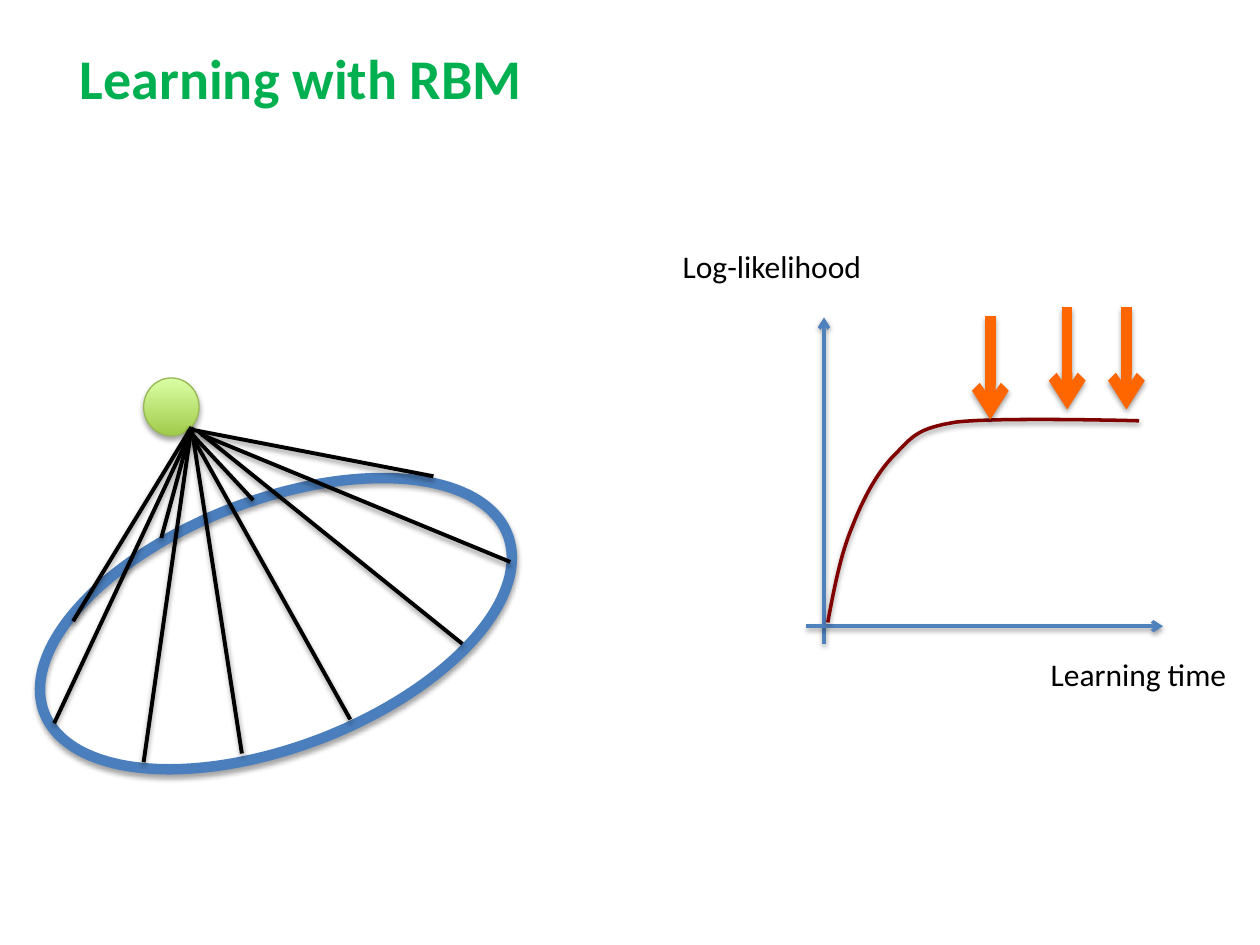
from lxml import etree
from pptx import Presentation, util as u
from pptx.dml.color import RGBColor
from pptx.enum import shapes, text
from pptx.oxml import ns

LABELS = [
    ("Learning with RBM ", (0, 0.3, 4.88, 0.64), 32, "00B050", True),
    ("Learning time", (8.24, 5.15, 1.61, 0.4), 18, "000000", False),
    ("Log-likelihood", (5.32, 1.91, 1.64, 0.4), 18, "000000", False),
]
NODE = (1.14, 3, 0.44, 0.46)
RING = (0.22, 3.97, 3.94, 1.96)
RING_ROTATION = -21
SPOKES = [
    ((1.52, 3.41), (3.44, 3.78)),
    ((1.6, 3.45), (4.05, 4.46)),
    ((1.57, 3.42), (3.67, 5.11)),
    ((1.54, 3.49), (2.78, 5.71)),
    ((1.52, 3.39), (1.92, 5.98)),
    ((1.52, 3.39), (1.14, 6.05)),
    ((1.49, 3.48), (0.43, 5.74)),
    ((1.52, 3.39), (0.58, 4.93)),
    ((1.49, 3.41), (2.01, 3.97)),
    ((1.52, 3.39), (1.28, 4.27)),
]
AXES = [((6.54, 5.11), (6.54, 2.52)), ((6.4, 4.97), (9.23, 4.97))]
MARKERS = [(8.94, 2.44, 3.25), (8.47, 2.44, 3.25), (7.86, 2.51, 3.33)]
CURVE_START = (6.57, 4.94)
CURVE = [
    ((6.62, 4.67), (6.67, 4.41), (6.76, 4.19)),
    ((6.85, 3.96), (6.96, 3.75), (7.1, 3.61)),
    ((7.24, 3.47), (7.27, 3.4), (7.59, 3.35)),
    ((7.92, 3.31), (9.04, 3.34), (9.04, 3.34)),
]
CURVE_STEPS = 16


def color(value):
    return RGBColor.from_string(value)


def set_line(shape, value, width):
    shape.line.color.rgb = color(value)
    shape.line.width = u.Pt(width)


def add_shadow(shape, opacity, distance):
    properties = shape._element.spPr
    for old in properties.findall(ns.qn("a:effectLst")):
        properties.remove(old)
    effects = etree.SubElement(properties, ns.qn("a:effectLst"))
    shadow = etree.SubElement(
        effects, ns.qn("a:outerShdw"), blurRad=str(u.Pt(3.1)),
        dist=str(u.Pt(distance)), dir="5400000", rotWithShape="0")
    black = etree.SubElement(shadow, ns.qn("a:srgbClr"), val="000000")
    etree.SubElement(black, ns.qn("a:alpha"), val=str(opacity * 1000))


def add_label(slide, content, box, size, value, is_title):
    frame = slide.shapes.add_textbox(*map(u.Inches, box)).text_frame
    frame.word_wrap = is_title
    frame.auto_size = text.MSO_AUTO_SIZE.SHAPE_TO_FIT_TEXT
    paragraph = frame.paragraphs[0]
    paragraph.text = content
    paragraph.alignment = text.PP_ALIGN.CENTER if is_title else text.PP_ALIGN.LEFT
    paragraph.font.name = "Calibri"
    paragraph.font.size = u.Pt(size)
    paragraph.font.bold = is_title
    paragraph.font.color.rgb = color(value)


def add_ellipse(slide, box, value, width):
    ellipse = slide.shapes.add_shape(shapes.MSO_SHAPE.OVAL, *map(u.Inches, box))
    set_line(ellipse, value, width)
    add_shadow(ellipse, 35, 1.8)
    return ellipse


def add_line(slide, start, end, value, width, arrow=False):
    line = slide.shapes.add_connector(
        shapes.MSO_CONNECTOR.STRAIGHT, *map(u.Inches, start + end))
    set_line(line, value, width)
    if arrow:
        etree.SubElement(line.line._get_or_add_ln(), ns.qn("a:tailEnd"), type="arrow")
    add_shadow(line, 38, 1.6)


def curve_points():
    start = CURVE_START
    for first, second, end in CURVE:
        for step in range(1, CURVE_STEPS + 1):
            t = step / CURVE_STEPS
            s = 1 - t
            yield tuple(
                u.Inches(s**3 * a + 3 * s * s * t * b + 3 * s * t * t * c + t**3 * d)
                for a, b, c, d in zip(start, first, second, end))
        start = end


def add_curve(slide):
    builder = slide.shapes.build_freeform(*map(u.Inches, CURVE_START))
    builder.add_line_segments(list(curve_points()), close=False)
    curve = builder.convert_to_shape()
    curve.fill.background()
    set_line(curve, "800000", 2)
    add_shadow(curve, 38, 1.6)


def main():
    presentation = Presentation()
    presentation.slide_width, presentation.slide_height = u.Inches(10), u.Inches(7.5)
    slide = presentation.slides.add_slide(presentation.slide_layouts[6])

    for label in LABELS:
        add_label(slide, *label)

    node = add_ellipse(slide, NODE, "98B955", 0.75)
    node.fill.gradient()
    node.fill.gradient_angle = 90
    for stop, value, position in zip(
            node.fill.gradient_stops, ("A0CA4A", "DAFFA5"), (0, 1)):
        stop.color.rgb = color(value)
        stop.position = position

    ring = add_ellipse(slide, RING, "4B7EBC", 6)
    ring.fill.background()
    ring.rotation = RING_ROTATION

    for start, end in SPOKES:
        add_line(slide, start, end, "000000", 2.25)
    for start, end in AXES:
        add_line(slide, start, end, "4F81BD", 2, arrow=True)
    add_curve(slide)
    for x, top, bottom in MARKERS:
        add_line(slide, (x, top), (x, bottom), "FF6600", 6, arrow=True)

    presentation.save("out.pptx")


if __name__ == "__main__":
    main()
